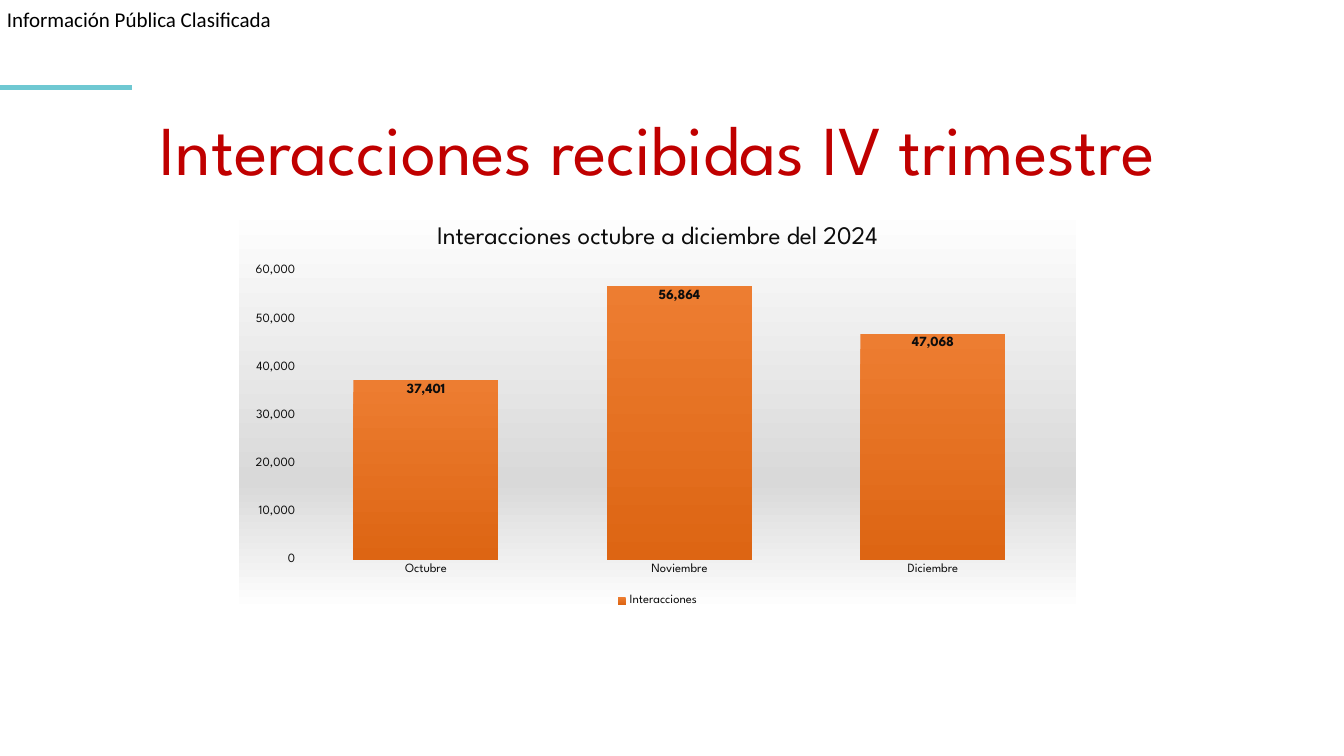
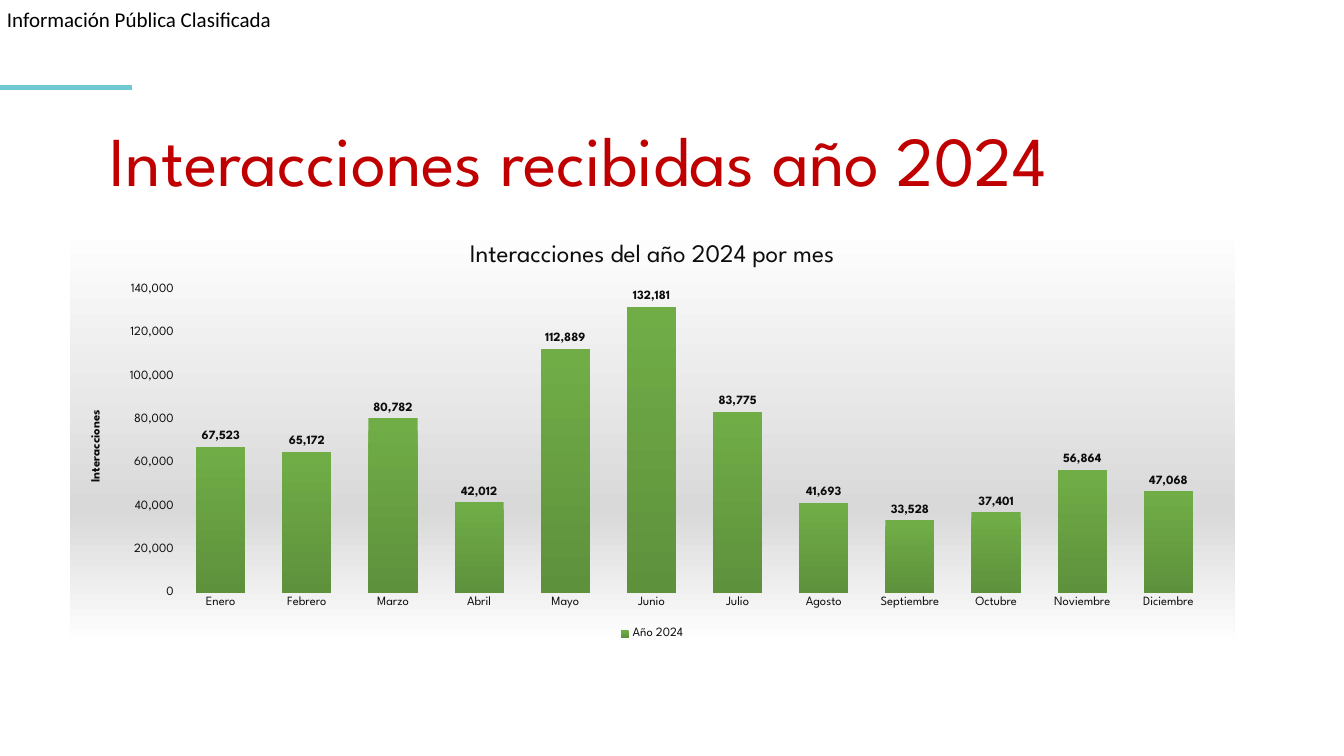
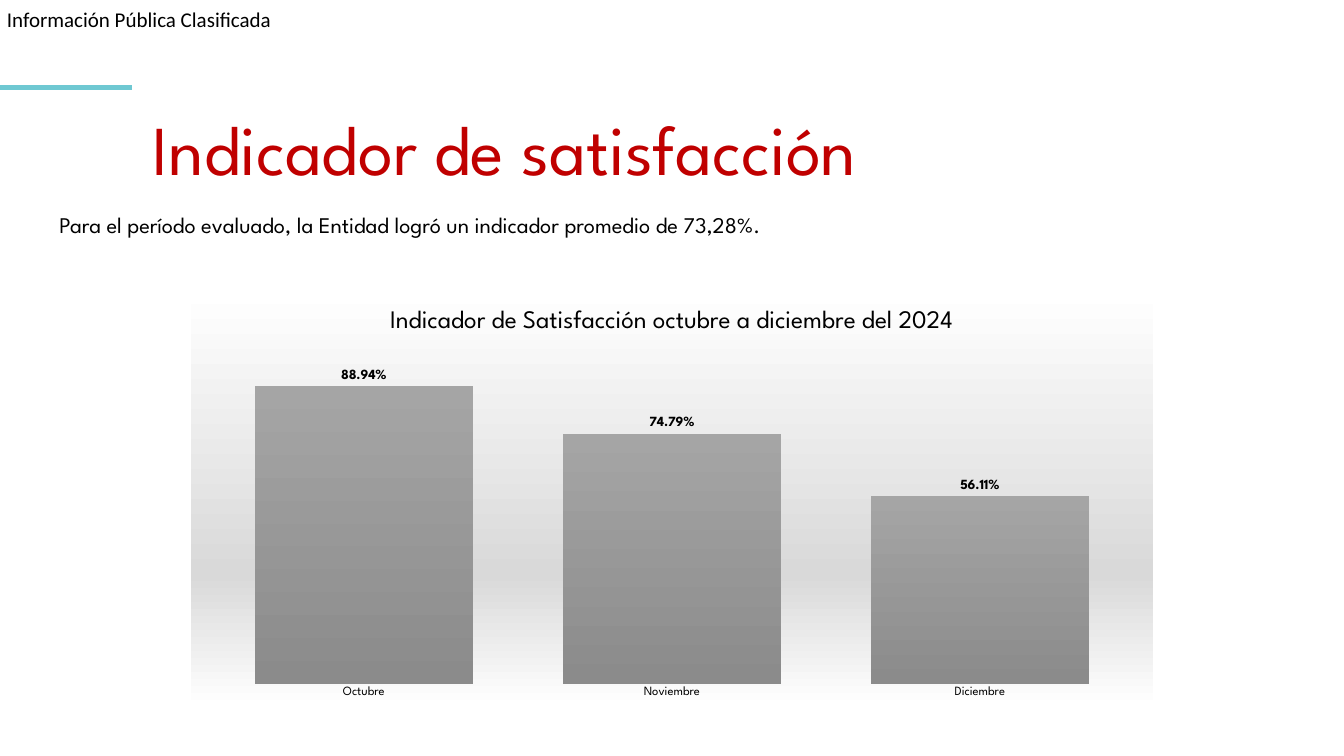
from lxml import etree
from pptx import Presentation
from pptx.chart.data import CategoryChartData
from pptx.dml.color import RGBColor
from pptx.enum.chart import (XL_CHART_TYPE, XL_LABEL_POSITION,
                             XL_LEGEND_POSITION, XL_TICK_MARK)
from pptx.enum.shapes import MSO_SHAPE
from pptx.enum.text import MSO_ANCHOR, MSO_AUTO_SIZE, PP_ALIGN
from pptx.oxml.ns import qn
from pptx.util import Pt

# Enum members
COLUMNS = XL_CHART_TYPE.COLUMN_CLUSTERED
INSIDE_END = XL_LABEL_POSITION.INSIDE_END
OUTSIDE_END = XL_LABEL_POSITION.OUTSIDE_END
BOTTOM = XL_LEGEND_POSITION.BOTTOM
NO_TICK = XL_TICK_MARK.NONE
RECT = MSO_SHAPE.RECTANGLE
TOP = MSO_ANCHOR.TOP
FIT_SHAPE = MSO_AUTO_SIZE.SHAPE_TO_FIT_TEXT
LEFT, CENTER, JUSTIFY = PP_ALIGN.LEFT, PP_ALIGN.CENTER, PP_ALIGN.JUSTIFY

# Shared style
FONT = "League Spartan"
LABEL_FONT = "Calibri"
BLACK = RGBColor(0x00, 0x00, 0x00)
INK = RGBColor(0x0D, 0x0D, 0x0D)
RED = RGBColor(0xC0, 0x00, 0x00)
TEAL = RGBColor(0x6F, 0xC8, 0xD2)
WHITE = RGBColor(0xFF, 0xFF, 0xFF)
SILVER = RGBColor(0xD9, 0xD9, 0xD9)
ORANGE = (RGBColor(0xED, 0x7D, 0x31), RGBColor(0xDD, 0x65, 0x13))
GREEN = (RGBColor(0x70, 0xAD, 0x47), RGBColor(0x5E, 0x91, 0x3C))
GRAY = (RGBColor(0xA5, 0xA5, 0xA5), RGBColor(0x8B, 0x8B, 0x8B))

# Data
MONTHS = ["Enero", "Febrero", "Marzo", "Abril", "Mayo", "Junio", "Julio",
          "Agosto", "Septiembre", "Octubre", "Noviembre", "Diciembre"]
INTERACTIONS = [67523, 65172, 80782, 42012, 112889, 132181, 83775,
                41693, 33528, 37401, 56864, 47068]
SATISFACTION = [0.8894, 0.7479, 0.5611]


def set_font(font, size, color, bold=False, name=FONT):
    font.name, font.size, font.bold = name, Pt(size), bold
    font.color.rgb = color


def place(sp, box):
    sp.left, sp.top, sp.width, sp.height = (Pt(v) for v in box)


def write(tf, text, size, color, align, name=FONT):
    tf.text = text
    p = tf.paragraphs[0]
    p.alignment = align
    set_font(p.font, size, color, name=name)
    tf.vertical_anchor = TOP
    tf.auto_size = FIT_SHAPE


def add_text(slide, box, text, size, align, name=FONT, margin=None):
    tf = slide.shapes.add_textbox(*(Pt(v) for v in box)).text_frame
    write(tf, text, size, BLACK, align, name)
    tf.word_wrap = True
    if margin is not None:
        tf.margin_left = tf.margin_right = Pt(margin)
        tf.margin_top = tf.margin_bottom = Pt(margin)


def add_slide(prs, title, title_box):
    """Slide with the classification label, accent bar and red title."""
    slide = prs.slides.add_slide(prs.slide_layouts[5])
    add_text(slide, (5, 5, 230, 18), "Información Pública Clasificada",
             15, LEFT, LABEL_FONT, 0)
    bar = slide.shapes.add_shape(RECT, 0, Pt(60.8), Pt(94.3), Pt(3.5))
    bar.shadow.inherit = False
    bar.fill.solid()
    bar.fill.fore_color.rgb = TEAL
    bar.line.fill.background()
    place(slide.shapes.title, title_box)
    tf = slide.shapes.title.text_frame
    write(tf, title, 50, RED, CENTER)
    tf.word_wrap = False
    return slide


def add_gradient(parent, stops):
    """Top-to-bottom gradient from (percent, colour) stops."""
    grad = etree.SubElement(parent, qn("a:gradFill"), rotWithShape="1")
    stop_list = etree.SubElement(grad, qn("a:gsLst"))
    for percent, color in stops:
        stop = etree.SubElement(stop_list, qn("a:gs"), pos=str(percent * 1000))
        etree.SubElement(stop, qn("a:srgbClr"), val=str(color))
    etree.SubElement(grad, qn("a:lin"), ang="5400000", scaled="0")


def fill_chart_area(chart):
    space = chart._chartSpace
    props = etree.Element(qn("c:spPr"))
    space.find(qn("c:chart")).addnext(props)
    add_gradient(props, [(0, WHITE), (68, SILVER), (100, WHITE)])
    etree.SubElement(etree.SubElement(props, qn("a:ln")), qn("a:noFill"))


def style_axis(axis, color):
    axis.has_major_gridlines = False
    axis.major_tick_mark = axis.minor_tick_mark = NO_TICK
    axis.format.line.fill.background()
    set_font(axis.tick_labels.font, 9, color)


def add_columns(slide, box, title, months, name, values, colors, top, *,
                number_format="#,##0", ink=INK, gap=75, overlap=-25,
                label_size=10, label_position=OUTSIDE_END,
                axis_title=None, show_scale=True):
    data = CategoryChartData(number_format=number_format)
    data.categories = months
    data.add_series(name, values)
    chart = slide.shapes.add_chart(COLUMNS, *(Pt(v) for v in box), data).chart
    set_font(chart.font, 10, ink)
    fill_chart_area(chart)

    # Title and legend
    chart.has_title = True
    chart.chart_title.include_in_layout = False
    tf = chart.chart_title.text_frame
    tf.text = title
    set_font(tf.paragraphs[0].font, 18, ink)
    chart.has_legend = show_scale
    if show_scale:
        chart.legend.position = BOTTOM
        chart.legend.include_in_layout = False
        set_font(chart.legend.font, 9, ink)

    # Axes
    scale = chart.value_axis
    for axis in (chart.category_axis, scale):
        style_axis(axis, ink)
    scale.minimum_scale, scale.maximum_scale = 0, top
    scale.tick_labels.number_format = number_format
    scale.tick_labels.number_format_is_linked = False
    scale.visible = show_scale
    if axis_title:
        tf = scale.axis_title.text_frame
        tf.text = axis_title
        set_font(tf.paragraphs[0].font, 9, ink, bold=True)

    # Columns and their labels
    plot = chart.plots[0]
    plot.gap_width, plot.overlap = gap, overlap
    plot.vary_by_categories = False
    series = plot.series[0]
    add_gradient(series._element.get_or_add_spPr(), zip((0, 100), colors))
    labels = series.data_labels
    labels.show_value = True
    labels.position = label_position
    labels.number_format = number_format
    labels.number_format_is_linked = False
    set_font(labels.font, label_size, ink, bold=True)


def main():
    prs = Presentation()
    prs.slide_width, prs.slide_height = Pt(960), Pt(540)

    # Fourth quarter
    slide = add_slide(prs, "Interacciones recibidas IV trimestre",
                      (67.7, 72, 804.2, 67.7))
    add_columns(slide, (170.6, 146.9, 598.3, 289.4),
                "Interacciones octubre a diciembre del 2024", MONTHS[-3:],
                "Interacciones", INTERACTIONS[-3:], ORANGE, 60000,
                label_position=INSIDE_END)

    # Whole year
    slide = add_slide(prs, "Interacciones recibidas año 2024",
                      (35.3, 79.9, 756.7, 67.7))
    add_columns(slide, (49.7, 159.8, 832.3, 300.2),
                "Interacciones del año 2024 por mes", MONTHS,
                "Año 2024", INTERACTIONS, GREEN, 140000,
                label_size=9, axis_title="Interacciones")

    # Satisfaction
    slide = add_slide(prs, "Indicador de satisfacción",
                      (76.3, 72, 568.8, 67.7))
    add_text(slide, (35.3, 147.6, 897.8, 26.6),
             "Para el período evaluado, la Entidad logró un indicador "
             "promedio de 73,28%.", 16, JUSTIFY)
    add_columns(slide, (136.1, 206.6, 687.6, 298.8),
                "Indicador de Satisfacción octubre a diciembre del 2024",
                MONTHS[-3:], "Series 1", SATISFACTION, GRAY, 1,
                number_format="0.00%", ink=BLACK, gap=41, overlap=0,
                show_scale=False)

    prs.save("out.pptx")


if __name__ == "__main__":
    main()
